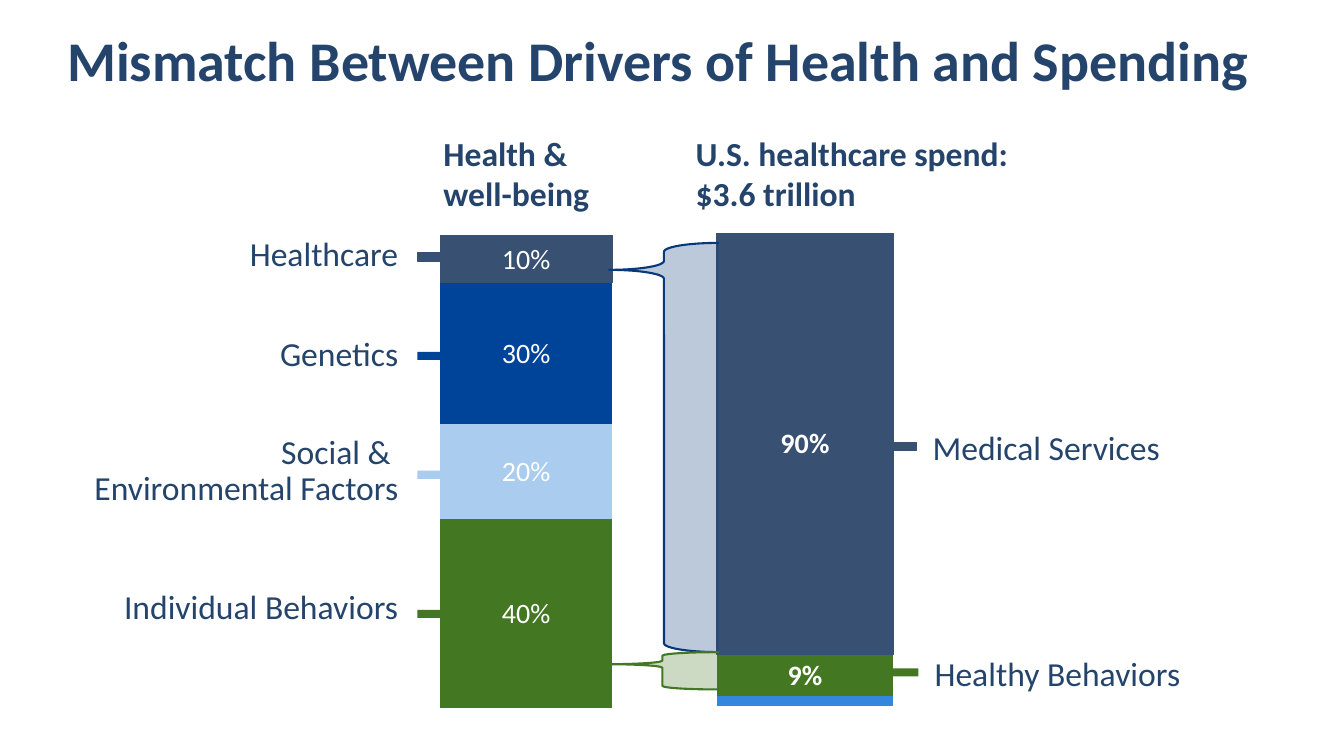
import pptx
import pptx.chart.data
import pptx.dml.color
import pptx.enum.chart
import pptx.enum.shapes
import pptx.enum.text
import pptx.oxml
import pptx.oxml.ns
import pptx.util
from dataclasses import dataclass

ALIGN = pptx.enum.text.PP_ALIGN
ANCHOR = pptx.enum.text.MSO_ANCHOR
SHAPE = pptx.enum.shapes.MSO_SHAPE


@dataclass(frozen=True)
class Theme:
    font: str = "Calibri"
    text: str = "24446C"
    white: str = "FFFFFF"
    slate: str = "385072"
    navy: str = "004499"
    pale: str = "AACCEE"
    bright: str = "3388DD"
    green: str = "447722"
    brace: str = "07387C"
    title_size: int = 40
    body_size: int = 24
    value_size: int = 20


class SlideBuilder:
    scale = 9144

    def __init__(self, page, theme):
        self.page = page
        self.theme = theme

    def place(self, *lengths):
        return [pptx.util.Emu(length * self.scale) for length in lengths]

    def color(self, code):
        return pptx.dml.color.RGBColor.from_string(code)

    def style_font(self, font, size, code, bold):
        font.name = self.theme.font
        font.size = pptx.util.Pt(size)
        font.bold = bold
        font.color.rgb = self.color(code)

    def text(self, area, lines, size=None, bold=False, align=ALIGN.LEFT,
             spacing=1.0, inset=5, side_inset=10, anchor=ANCHOR.TOP):
        box = self.page.shapes.add_textbox(*self.place(*area))
        frame = box.text_frame
        frame.word_wrap = True
        frame.vertical_anchor = anchor
        frame.margin_left, frame.margin_right = self.place(side_inset, side_inset)
        frame.margin_top, frame.margin_bottom = self.place(inset, inset)
        para = frame.paragraphs[0]
        para.alignment = align
        para.line_spacing = spacing
        for index, line in enumerate(lines):
            if index:
                para.add_line_break()
            span = para.add_run()
            span.text = line
            self.style_font(span.font, size or self.theme.body_size, self.theme.text, bold)

    def label(self, left, top, lines, align):
        height = 46 if len(lines) == 1 else 83
        self.text((left, top, 334, height), lines, align=align, spacing=0.9, side_inset=5)

    def shape(self, kind, area, fill, line_width=0):
        item = self.page.shapes.add_shape(kind, *self.place(*area))
        item.shadow.inherit = False
        item.fill.solid()
        item.fill.fore_color.rgb = self.color(fill)
        if line_width:
            item.line.color.rgb = self.color(fill)
            item.line.width = pptx.util.Pt(line_width)
        else:
            item.line.fill.background()
        return item

    def tick(self, left, top, fill):
        outline = 1 if fill == self.theme.slate else 0
        self.shape(SHAPE.RECTANGLE, (left, top, 33, 8), fill, outline)

    def brace(self, area, code, curve, tip):
        item = self.shape(SHAPE.LEFT_BRACE, area, code, 1.5)
        item.adjustments[0] = curve
        item.adjustments[1] = tip
        fill = item.fill.fore_color._xFill.find(pptx.oxml.ns.qn("a:srgbClr"))
        fill.append(pptx.oxml.parse_xml(
            f'<a:alpha {pptx.oxml.ns.nsdecls("a")} val="27000"/>'))

    def stack(self, area, layers, bold):
        data = pptx.chart.data.CategoryChartData(number_format="0%")
        data.categories = ["1"]
        for number, (value, code, labelled) in enumerate(layers, 1):
            data.add_series(f"Series {number}", [value])
        kind = pptx.enum.chart.XL_CHART_TYPE.COLUMN_STACKED_100
        chart = self.page.shapes.add_chart(kind, *self.place(*area), data).chart
        chart.has_legend = False
        chart.has_title = False
        self.style_font(chart.font, self.theme.value_size, self.theme.white, bold)
        for axis in (chart.category_axis, chart.value_axis):
            axis.visible = False
            axis.has_major_gridlines = False
        plot = chart.plots[0]
        plot.gap_width = 150
        plot.overlap = 100
        plot.vary_by_categories = False
        for series, (value, code, labelled) in zip(plot.series, layers):
            series.format.fill.solid()
            series.format.fill.fore_color.rgb = self.color(code)
            if code == self.theme.slate:
                series.format.line.color.rgb = self.color(code)
                series.format.line.width = pptx.util.Pt(0.75)
            if labelled:
                labels = series.data_labels
                labels.show_value = True
                labels.number_format = "0%"
                labels.number_format_is_linked = False
                labels.position = pptx.enum.chart.XL_LABEL_POSITION.CENTER
                self.style_font(labels.font, self.theme.value_size, self.theme.white, bold)


def main():
    theme = Theme()
    deck = pptx.Presentation()
    deck.slide_width, deck.slide_height = pptx.util.Inches(13.33), pptx.util.Inches(7.5)
    slide = SlideBuilder(deck.slides.add_slide(deck.slide_layouts[6]), theme)

    slide.text((57, 32, 1277, 62), ["Mismatch Between Drivers of Health and Spending"],
               size=theme.title_size, bold=True, spacing=0.9, anchor=ANCHOR.MIDDLE)

    slide.stack((300, 224, 444, 488), [
        (0.4, theme.green, True),
        (0.2, theme.pale, True),
        (0.3, theme.navy, True),
        (0.1, theme.slate, True),
    ], bold=False)
    slide.text((430, 127, 286, 91), ["Health & ", "well-being"], bold=True)
    drivers = [
        (["Healthcare"], 231, 251, theme.slate),
        (["Genetics"], 330, 349, theme.navy),
        (["Social & ", "Environmental Factors"], 427, 467, theme.pale),
        (["Individual Behaviors"], 581, 605, theme.green),
    ]
    for lines, label_top, tick_top, code in drivers:
        slide.label(66, label_top, lines, ALIGN.RIGHT)
        slide.tick(414, tick_top, code)

    slide.stack((570, 222, 457, 488), [
        (0.02, theme.bright, False),
        (0.09, theme.green, True),
        (0.9, theme.slate, True),
    ], bold=True)
    slide.text((680, 127, 399, 91), ["U.S. healthcare spend: ", "$3.6 trillion"], bold=True)
    spending = [
        ("Medical Services", 920, 423, theme.slate),
        ("Healthy Behaviors", 922, 647, theme.green),
    ]
    for name, left, top, code in spending:
        slide.label(left, top, [name], ALIGN.LEFT)
        slide.tick(left - 44, top + 16, code)

    slide.brace((604, 241, 109, 406), theme.brace, 0.081, 0.066)
    slide.brace((601, 647, 112, 37), theme.green, 0.096, 0.324)

    deck.save("out.pptx")


if __name__ == "__main__":
    main()
